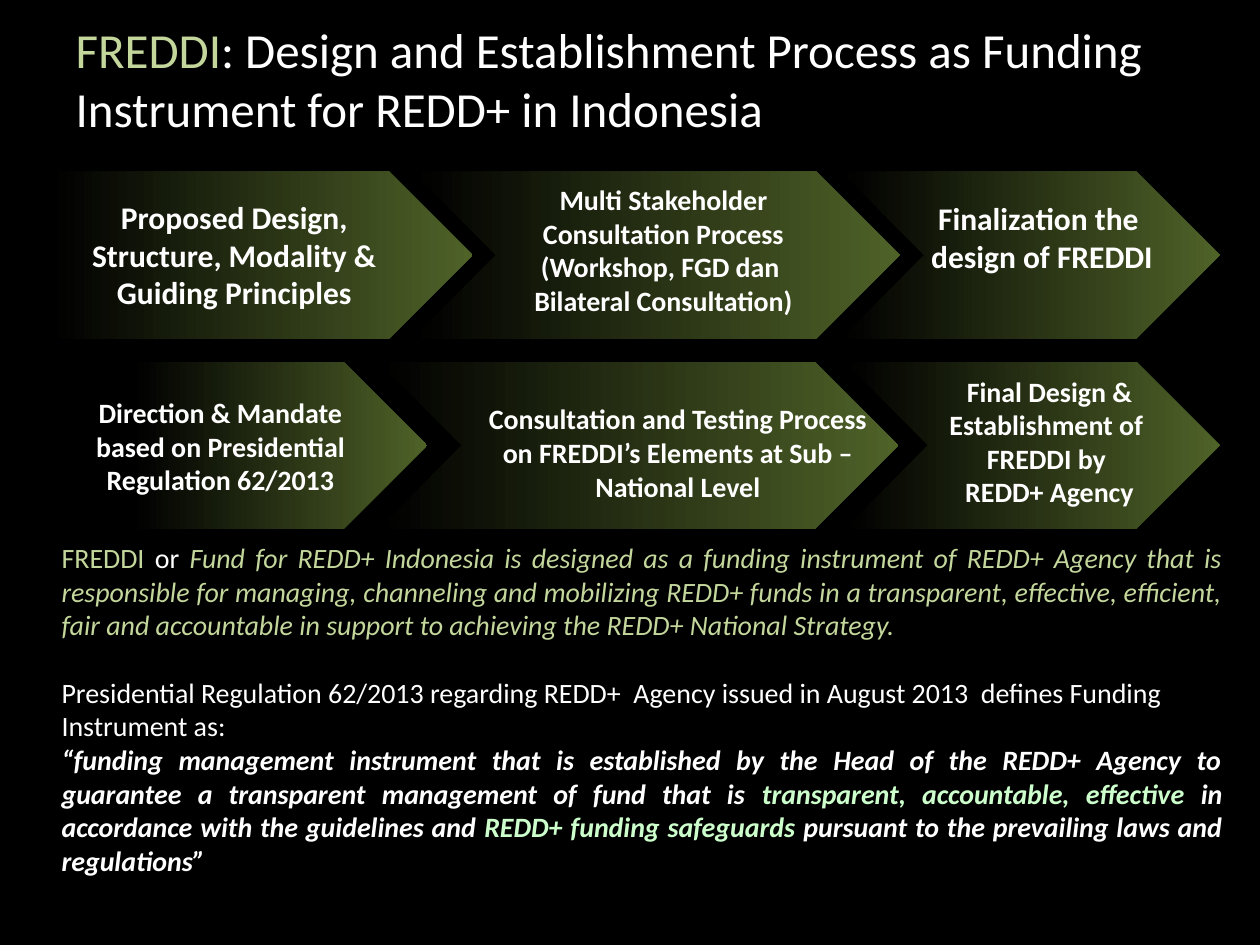
from pptx import Presentation
from pptx.dml.color import RGBColor
from pptx.enum.shapes import MSO_SHAPE
from pptx.enum.text import MSO_ANCHOR, PP_ALIGN
from pptx.util import Inches, Pt

PENTAGON, CHEVRON = MSO_SHAPE.PENTAGON, MSO_SHAPE.CHEVRON
LEFT, CENTER, JUSTIFY = PP_ALIGN.LEFT, PP_ALIGN.CENTER, PP_ALIGN.JUSTIFY
MIDDLE, TOP = MSO_ANCHOR.MIDDLE, MSO_ANCHOR.TOP
TITLE_ONLY = 5

COLORS = {"black": "000000", "olive": "4F6228", "lime": "C3D69B",
          "mint": "CCFFCC", "white": "FFFFFF"}
BOLD = {"bold": True}
ITALIC = {"italic": True}
QUOTE = {"bold": True, "italic": True}

# Each row of arrows: top, then (shape, left, width)
ARROW_ROWS = [
    (1.36, [(PENTAGON, 0.39, 3.36), (CHEVRON, 3.27, 3.87), (CHEVRON, 6.67, 3.01)]),
    (2.87, [(PENTAGON, 1.05, 2.34), (CHEVRON, 3, 4.13), (CHEVRON, 6.7, 2.98)]),
]
ARROW_HEIGHT = 1.33

# Each step: place, text size, lines
STEPS = [
    ((0.61, 1.52, 2.5, 1.01), 18,
     ["Proposed Design, Structure, Modality & Guiding Principles"]),
    ((3.74, 1.4, 3.05, 1.18), 16,
     ["Multi Stakeholder Consultation Process (Workshop, FGD dan ",
      "Bilateral Consultation)"]),
    ((7.24, 1.53, 2.06, 1.01), 18, ["Finalization the ", "design of FREDDI"]),
    ((0.5, 3.09, 2.5, 0.91), 16,
     ["Direction & Mandate based on Presidential Regulation 62/2013"]),
    ((7.16, 2.92, 2.34, 1.18), 16,
     ["Final Design & Establishment of ", "FREDDI by ", "REDD+ Agency"]),
    ((3.74, 3.14, 3.28, 0.91), 16,
     ["Consultation and Testing Process on FREDDI’s Elements at Sub –National Level"]),
]

TITLE = [("FREDDI", "lime", {}),
         (": Design and Establishment Process as Funding Instrument for REDD+ "
          "in Indonesia", "white", {})]

# Each paragraph: alignment, space before, spans of (text, colour, format)
DEFINITION = [
    (JUSTIFY, 0, [
        ("FREDDI ", "lime", {}),
        ("or ", "white", {}),
        ("Fund for REDD+ Indonesia is designed as a funding instrument of REDD+ "
         "Agency that is responsible for managing, channeling and mobilizing REDD+ "
         "funds in a transparent, effective, efficient, fair and accountable in "
         "support to achieving the REDD+ National Strategy.", "lime", ITALIC)]),
    (LEFT, 19.5, [
        ("Presidential Regulation 62/2013 regarding REDD+  Agency issued in August "
         "2013  defines Funding Instrument as:", "white", {})]),
    (JUSTIFY, 0, [
        ("“funding management instrument that is established by the Head of the "
         "REDD+ Agency to guarantee a transparent management of fund that is ",
         "white", QUOTE),
        ("transparent, accountable, effective ", "mint", QUOTE),
        ("in accordance with the guidelines and ", "white", QUOTE),
        ("REDD+ funding safeguards ", "mint", QUOTE),
        ("pursuant to the prevailing laws and regulations”", "white", QUOTE)]),
]


class Page:
    """The current slide and its style, on a grid of 10 columns by 7.5 rows."""

    font = "Calibri"
    columns, rows = 10, 7.5

    def __init__(self, deck):
        self.column = deck.slide_width / self.columns
        self.row = deck.slide_height / self.rows
        self.slide = deck.slides.add_slide(deck.slide_layouts[TITLE_ONLY])
        fill = self.slide.background.fill
        fill.solid()
        fill.fore_color.rgb = self.color("black")

    @staticmethod
    def color(name):
        return RGBColor.from_string(COLORS[name])

    def place(self, left, top, width, height):
        return (round(left * self.column), round(top * self.row),
                round(width * self.column), round(height * self.row))

    def fill_text(self, frame, paragraphs, size, anchor):
        frame.word_wrap = True
        frame.vertical_anchor = anchor
        for index, (align, before, spans) in enumerate(paragraphs):
            para = frame.add_paragraph() if index else frame.paragraphs[0]
            para.alignment = align
            para.space_before = Pt(before)
            for text, color, extra in spans:
                span = para.add_run()
                span.text = text
                span.font.color.rgb = self.color(color)
                values = {"name": self.font, "size": Pt(size), **extra}
                for name, value in values.items():
                    setattr(span.font, name, value)

    def title(self, place, spans, size):
        box = self.slide.shapes.title
        box.left, box.top, box.width, box.height = self.place(*place)
        self.fill_text(box.text_frame, [(LEFT, 0, spans)], size, MIDDLE)

    def arrow(self, kind, place):
        """Add an arrow block that fades in from black to olive."""
        shape = self.slide.shapes.add_shape(kind, *self.place(*place))
        shape.shadow.inherit = False
        shape.line.fill.background()
        shape.fill.gradient()
        shape.fill.gradient_angle = 0
        for stop, position, name in zip(shape.fill.gradient_stops, (0, 1),
                                        ("black", "olive")):
            stop.position = position
            stop.color.rgb = self.color(name)

    def text(self, place, paragraphs, size):
        box = self.slide.shapes.add_textbox(*self.place(*place))
        self.fill_text(box.text_frame, paragraphs, size, TOP)


def main():
    deck = Presentation()
    deck.slide_width, deck.slide_height = Inches(10), Inches(7.5)
    page = Page(deck)
    page.title((0.5, 0, 9, 1.25), TITLE, 28)
    for top, arrows in ARROW_ROWS:
        for kind, left, width in arrows:
            page.arrow(kind, (left, top, width, ARROW_HEIGHT))
    for place, size, lines in STEPS:
        page.text(place, [(CENTER, 0, [(line, "white", BOLD)]) for line in lines], size)
    page.text((0.39, 4.24, 9.41, 2.79), DEFINITION, 16)
    deck.save("out.pptx")


if __name__ == "__main__":
    main()
